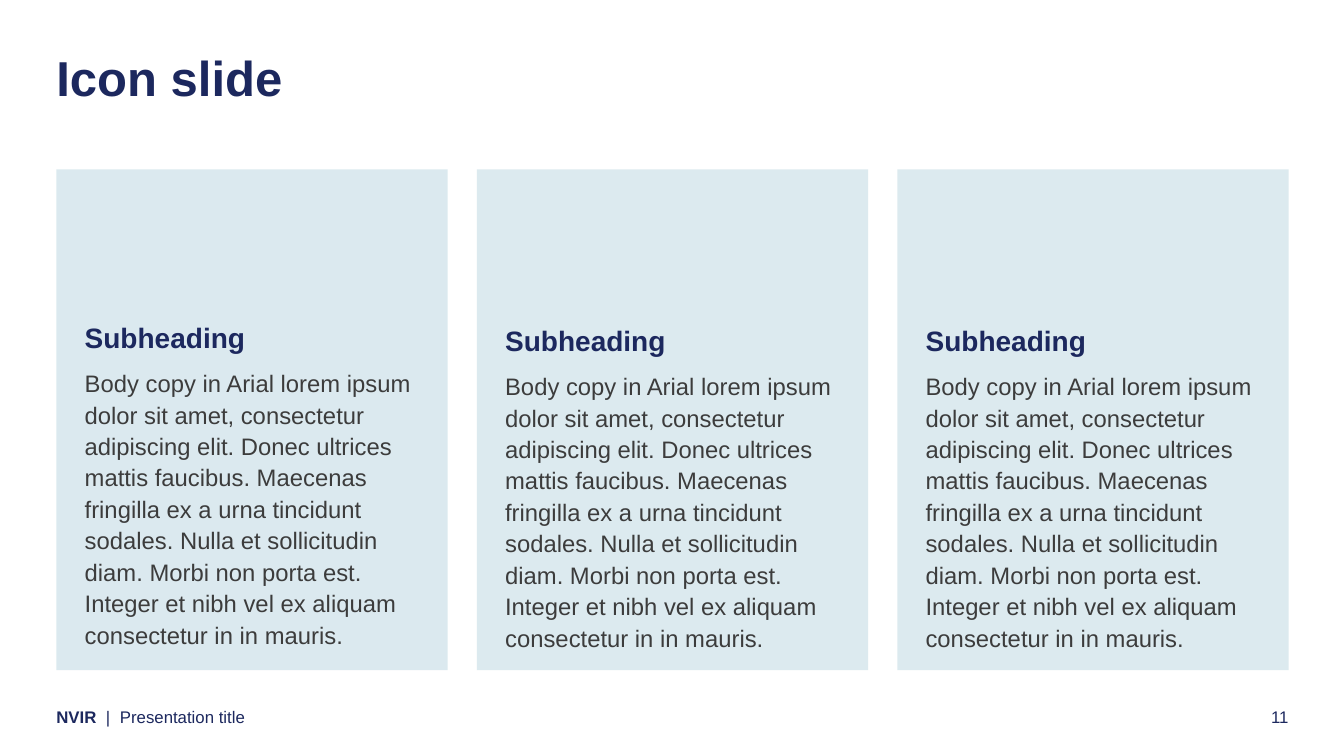
from dataclasses import dataclass

from lxml.etree import SubElement
from pptx import Presentation
from pptx.dml.color import RGBColor
from pptx.enum.shapes import MSO_SHAPE
from pptx.enum.text import MSO_ANCHOR, PP_ALIGN
from pptx.oxml.ns import qn
from pptx.slide import Slide
from pptx.text.text import TextFrame
from pptx.util import Inches, Pt

NAVY = "1C285E"
GREY = "3C3C3C"
PALE_BLUE = "C5DCE5"
FONT = "Arial"
MARGIN = 0.56
FOOTER_TOP = 7.01
FOOTER_HEIGHT = 0.2
CARD_TOP = 1.68
CARD_WIDTH = 3.88
CARD_HEIGHT = 4.97
CARD_STEP = 4.17
CARD_PADDING = 0.28
BODY_COPY = (
    "Body copy in Arial lorem ipsum dolor sit amet, consectetur adipiscing elit. "
    "Donec ultrices mattis faucibus. Maecenas fringilla ex a urna tincidunt sodales. "
    "Nulla et sollicitudin diam. Morbi non porta est. Integer et nibh vel ex aliquam "
    "consectetur in in mauris."
)


@dataclass
class Span:
    text: str
    size: float
    color: str = NAVY
    bold: bool = False


@dataclass
class Para:
    spans: list[Span]
    line_spacing: float = 1.0
    space_after: float = 0
    align: PP_ALIGN = PP_ALIGN.LEFT


@dataclass
class Label:
    left: float
    top: float
    width: float
    height: float
    para: Para
    anchor: MSO_ANCHOR = MSO_ANCHOR.TOP
    wrap: bool = True


@dataclass
class Card:
    subheading: str
    body: str
    inset_top: float
    opacity: int


def rgb(color: str) -> RGBColor:
    return RGBColor.from_string(color)


def set_insets(frame: TextFrame, side: float, top: float) -> None:
    frame.margin_left = frame.margin_right = frame.margin_bottom = Inches(side)
    frame.margin_top = Inches(top)


def write(frame: TextFrame, paras: list[Para]) -> None:
    for index, para in enumerate(paras):
        paragraph = frame.add_paragraph() if index else frame.paragraphs[0]
        paragraph.alignment = para.align
        paragraph.line_spacing = para.line_spacing
        paragraph.space_after = Pt(para.space_after)
        for span in para.spans:
            run = paragraph.add_run()
            run.text = span.text
            run.font.name = FONT
            run.font.size = Pt(span.size)
            run.font.bold = span.bold
            run.font.color.rgb = rgb(span.color)


def add_label(page: Slide, label: Label) -> None:
    box = page.shapes.add_textbox(
        Inches(label.left), Inches(label.top), Inches(label.width), Inches(label.height)
    )
    frame = box.text_frame
    frame.word_wrap = label.wrap
    frame.vertical_anchor = label.anchor
    set_insets(frame, 0, 0)
    write(frame, [label.para])


def add_card(page: Slide, card: Card, left: float) -> None:
    panel = page.shapes.add_shape(
        MSO_SHAPE.RECTANGLE,
        Inches(left), Inches(CARD_TOP), Inches(CARD_WIDTH), Inches(CARD_HEIGHT),
    )
    panel.shadow.inherit = False
    panel.line.fill.background()
    panel.fill.solid()
    panel.fill.fore_color.rgb = rgb(PALE_BLUE)
    fill_color = panel.fill._xPr.find(qn("a:solidFill")).find(qn("a:srgbClr"))
    SubElement(fill_color, qn("a:alpha")).set("val", str(card.opacity * 1000))
    frame = panel.text_frame
    frame.word_wrap = True
    frame.vertical_anchor = MSO_ANCHOR.TOP
    set_insets(frame, CARD_PADDING, card.inset_top)
    write(frame, [
        Para([Span(card.subheading, 20, bold=True)], 0.9, 8),
        Para([Span(card.body, 17, GREY)], 1.1, 10),
    ])


LABELS = [
    Label(MARGIN, FOOTER_TOP, 0.57, FOOTER_HEIGHT,
          Para([Span("NVIR ", 12, bold=True), Span(" |", 12)]), wrap=False),
    Label(MARGIN, 0.52, 11.83, 0.55,
          Para([Span("Icon slide", 35, bold=True)], 0.9), MSO_ANCHOR.MIDDLE),
    Label(11.8, FOOTER_TOP, 0.98, FOOTER_HEIGHT,
          Para([Span("11", 12)], align=PP_ALIGN.RIGHT)),
    Label(1.19, FOOTER_TOP, 4.54, FOOTER_HEIGHT,
          Para([Span("Presentation title", 12)])),
]
CARDS = [
    Card("Subheading", BODY_COPY, 1.54, 61),
    Card("Subheading", BODY_COPY, 1.57, 60),
    Card("Subheading", BODY_COPY, 1.57, 60),
]


def main() -> None:
    deck = Presentation()
    deck.slide_width = Inches(13.33)
    deck.slide_height = Inches(7.5)
    page = deck.slides.add_slide(deck.slide_layouts[6])
    for label in LABELS:
        add_label(page, label)
    for column, card in enumerate(CARDS):
        add_card(page, card, MARGIN + column * CARD_STEP)
    deck.save("out.pptx")


if __name__ == "__main__":
    main()
